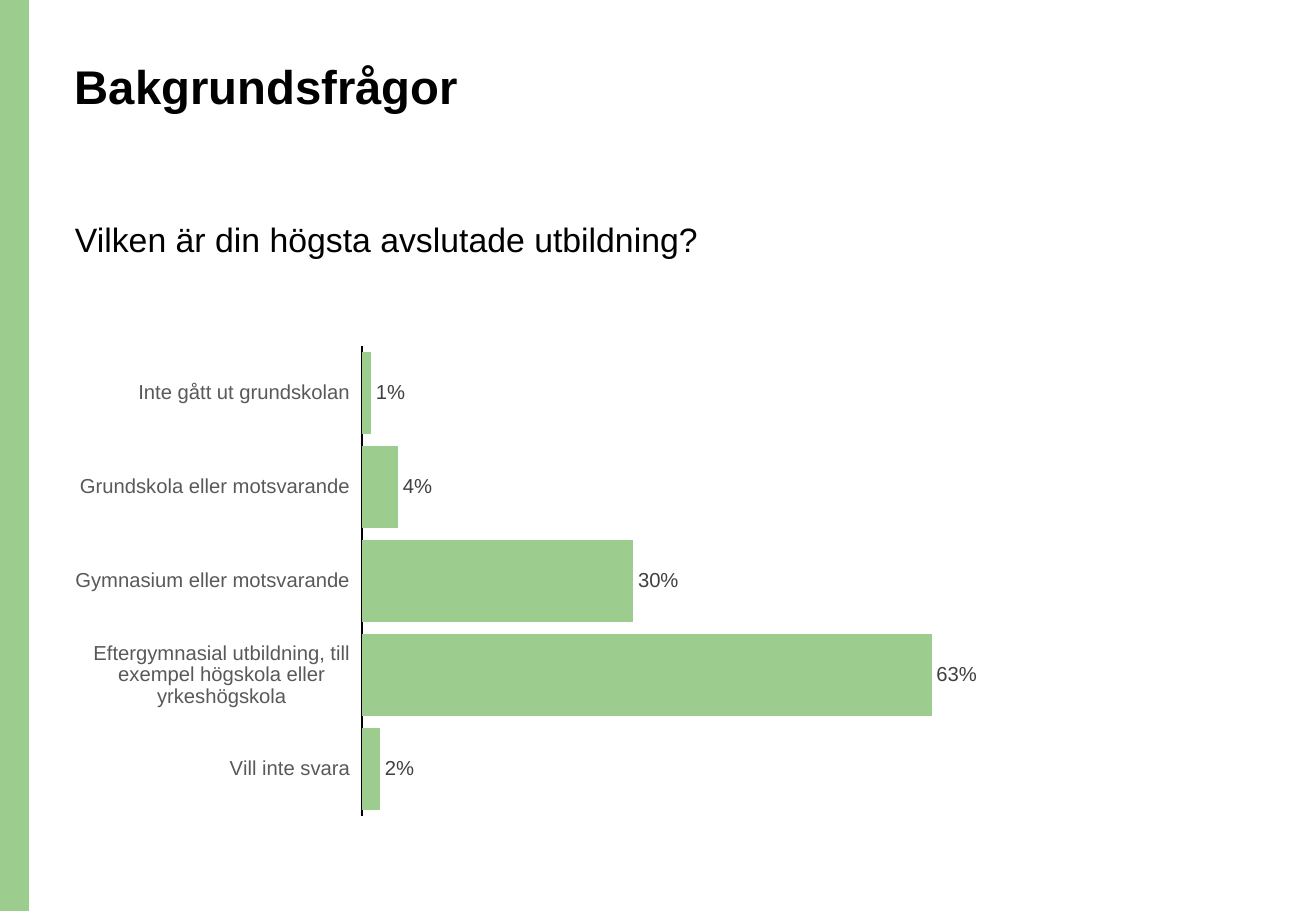
from lxml.etree import SubElement
from pptx import Presentation
from pptx.chart.data import CategoryChartData
from pptx.dml.color import RGBColor
from pptx.enum.chart import XL_CHART_TYPE, XL_LABEL_POSITION, XL_TICK_LABEL_POSITION, XL_TICK_MARK
from pptx.enum.shapes import MSO_SHAPE
from pptx.oxml.ns import qn
from pptx.util import Pt

TITLE = "Bakgrundsfrågor"
QUESTION = "Vilken är din högsta avslutade utbildning?"
ANSWERS = [
    ("Inte gått ut grundskolan", 0.01),
    ("Grundskola eller motsvarande", 0.04),
    ("Gymnasium eller motsvarande", 0.30),
    ("Eftergymnasial utbildning, till exempel högskola eller yrkeshögskola", 0.63),
    ("Vill inte svara", 0.02),
]
FONT, GREEN, BLACK = "Arial", "9DCC8F", "000000"
CHART = (63, 337, 956, 490)
PLOT = (362, 346, 633, 470)


def px(n):
    return round(n * 914400 / 121.5)


def color(code):
    return RGBColor.from_string(code)


def style(font, size, code, bold=False):
    font.name, font.size, font.bold = FONT, Pt(size), bold
    font.color.rgb = color(code)


def add_text(slide, text, box, size, bold=False, code=BLACK):
    frame = slide.shapes.add_textbox(*map(px, box)).text_frame
    frame.word_wrap = True
    para = frame.paragraphs[0]
    para.line_spacing = 0.9
    run = para.add_run()
    run.text = text
    style(run.font, size, code, bold)


def place_plot(chart):
    """Fix the inner plot area as fractions of the chart frame."""
    area = chart.element.find(".//" + qn("c:plotArea"))
    layout = area.find(qn("c:layout"))
    if layout is None:
        layout = SubElement(area, qn("c:layout"))
        area.insert(0, layout)
    manual = SubElement(layout, qn("c:manualLayout"))
    left, top, wide, high = CHART
    x, y, w, h = PLOT
    parts = [
        ("layoutTarget", "inner"), ("xMode", "edge"), ("yMode", "edge"),
        ("x", (x - left) / wide), ("y", (y - top) / high),
        ("w", w / wide), ("h", h / high),
    ]
    for tag, val in parts:
        SubElement(manual, qn("c:" + tag)).set("val", str(val))


def add_bars(slide):
    data = CategoryChartData(number_format="0%")
    data.categories = [name for name, _ in ANSWERS]
    data.add_series("Series 1", [share for _, share in ANSWERS])
    chart = slide.shapes.add_chart(
        XL_CHART_TYPE.BAR_CLUSTERED, *map(px, CHART), data).chart
    chart.has_legend = chart.has_title = False
    style(chart.font, 10, BLACK)

    names = chart.category_axis
    names.reverse_order = True
    names.major_tick_mark = names.minor_tick_mark = XL_TICK_MARK.NONE
    names.tick_label_position = XL_TICK_LABEL_POSITION.LOW
    names.format.line.color.rgb = color(BLACK)
    names.format.line.width = Pt(0.75)
    style(names.tick_labels.font, 12, "595959")

    scale = chart.value_axis
    scale.minimum_scale, scale.maximum_scale = 0, 0.7
    scale.has_major_gridlines = scale.visible = False

    plot = chart.plots[0]
    plot.gap_width = 15
    plot.vary_by_categories = False
    series = plot.series[0]
    series.format.fill.solid()
    series.format.fill.fore_color.rgb = color(GREEN)
    labels = series.data_labels
    labels.show_value = True
    labels.number_format, labels.number_format_is_linked = "0%", False
    labels.position = XL_LABEL_POSITION.OUTSIDE_END
    style(labels.font, 12, "404040")
    place_plot(chart)


deck = Presentation()
deck.slide_width, deck.slide_height = px(1316), px(911)
slide = deck.slides.add_slide(deck.slide_layouts[6])

band = slide.shapes.add_shape(MSO_SHAPE.RECTANGLE, 0, 0, px(29), px(911))
band.shadow.inherit = False
band.fill.solid()
band.fill.fore_color.rgb = color(GREEN)
band.line.fill.background()

add_text(slide, QUESTION, (63, 217, 733, 90), 20)
add_text(slide, TITLE, (63, 58, 1135, 124), 28, bold=True)
add_bars(slide)
deck.save("out.pptx")
